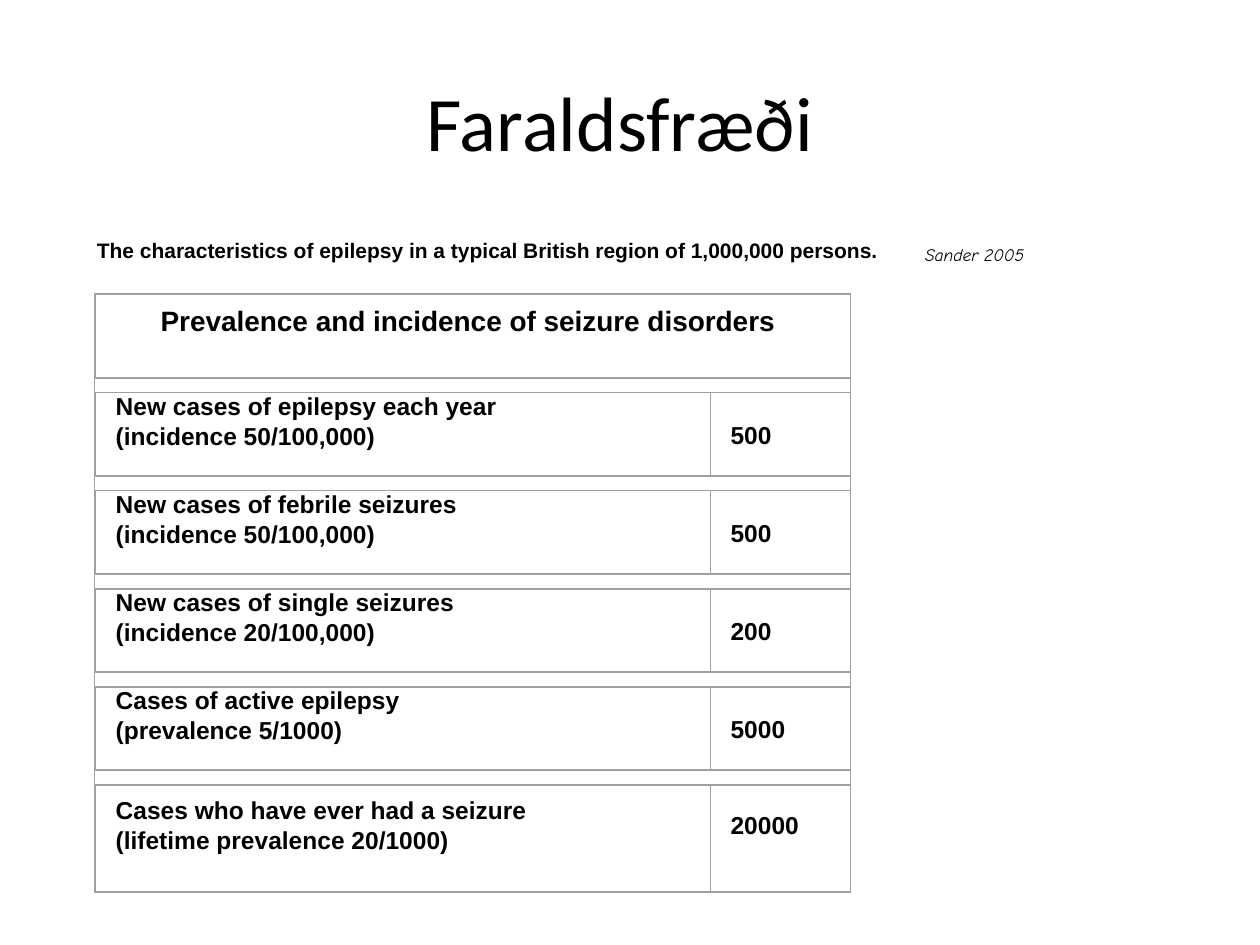
from dataclasses import dataclass

from lxml import etree
from pptx import Presentation
from pptx.dml.color import RGBColor
from pptx.enum.shapes import MSO_SHAPE
from pptx.enum.text import MSO_ANCHOR, PP_ALIGN
from pptx.util import Inches, Pt

RECT = MSO_SHAPE.RECTANGLE
TOP, MIDDLE = MSO_ANCHOR.TOP, MSO_ANCHOR.MIDDLE
LEFT, CENTER = PP_ALIGN.LEFT, PP_ALIGN.CENTER


@dataclass(frozen=True)
class Theme:
    ink: RGBColor = RGBColor(0, 0, 0)
    rule: RGBColor = RGBColor(0xA0, 0xA0, 0xA0)
    body: str = "Arial"
    head: str = "Calibri"
    note: str = "Comic Neue"
    title: int = 44
    header: int = 16
    cell: int = 14
    label: int = 12
    cite: int = 10


def write(frame, text, font, size, color, bold=False, italic=False, align=LEFT):
    """Fill a text frame, one paragraph per line of text."""
    for i, line in enumerate(text.split("\n")):
        para = frame.paragraphs[0] if i == 0 else frame.add_paragraph()
        para.alignment = align
        run = para.add_run()
        run.text = line
        run.font.name = font
        run.font.size = Pt(size)
        run.font.bold = bold
        run.font.italic = italic
        run.font.color.rgb = color


class Page:
    def __init__(self, slide, theme):
        self.slide = slide
        self.theme = theme

    def text(self, box, text, size, font=None, anchor=TOP, wrap=True,
             right=0.1, bottom=0.05, **style):
        shape = self.slide.shapes.add_textbox(*map(Inches, box))
        frame = shape.text_frame
        frame.word_wrap = wrap
        frame.vertical_anchor = anchor
        frame.margin_right = Inches(right)
        frame.margin_bottom = Inches(bottom)
        write(frame, text, font or self.theme.body, size, self.theme.ink, **style)

    def frame(self, box, width=0):
        shape = self.slide.shapes.add_shape(RECT, *map(Inches, box))
        shape.shadow.inherit = False
        shape.fill.background()
        shape.line.color.rgb = self.theme.rule
        shape.line.width = Pt(width)

    def cell(self, box, text, size, **style):
        x, y, w, h = box
        pad = 0.06
        inner = (x + pad, y + pad, w - 2 * pad, h - 2 * pad)
        self.text(inner, text, size, anchor=MIDDLE, bold=True, **style)
        self.frame(box)


ROWS = [
    ("New cases of epilepsy each year\n(incidence 50/100,000)", "500"),
    ("New cases of febrile seizures\n(incidence 50/100,000)", "500"),
    ("New cases of single seizures\n(incidence 20/100,000)", "200"),
    ("Cases of active epilepsy\n(prevalence 5/1000)", "5000"),
    ("Cases who have ever had a seizure\n(lifetime prevalence 20/1000)", "20000"),
]


def main():
    deck = Presentation()
    deck.slide_width, deck.slide_height = Inches(10), Inches(7.5)
    theme = Theme()
    page = Page(deck.slides.add_slide(deck.slide_layouts[6]), theme)

    # Caption above the table
    page.text((0.67, 1.84, 6.42, 0.33), "The characteristics of epilepsy in a "
              "typical British region of 1,000,000 persons.", theme.label,
              bold=True)

    # Header band; the larger bottom inset lifts the text
    left, top, high = 0.76, 2.34, 0.66
    wide, slim = 4.88, 1.11
    page.cell((left, top, wide + slim, high),
              "Prevalence and incidence of seizure disorders", theme.header,
              align=CENTER, right=0.18, bottom=0.3)

    # Rows at an even step; the last one is taller
    last = len(ROWS)
    step = (6.23 - top) / last
    lift = 0.27
    for i, (name, count) in enumerate(ROWS, 1):
        y = top + i * step
        tall = 0.85 if i == last else high
        page.cell((left, y, wide, tall), name, theme.cell, bottom=lift)
        page.cell((left + wide, y, slim, tall), count, theme.cell,
                  bottom=lift if i == last else 0.05)

    # Outer border
    page.frame((0.75, 2.33, 6, 4.75), width=0.75)

    # Citation and title
    page.text((7.21, 1.89, 1.05, 0.27), "Sander 2005", theme.cite, theme.note,
              wrap=False, italic=True, align=CENTER)
    page.text((0.42, 0.33, 9, 1.25), "Faraldsfræði", theme.title, theme.head,
              anchor=MIDDLE, align=CENTER)

    deck.save("out.pptx")


if __name__ == "__main__":
    main()
